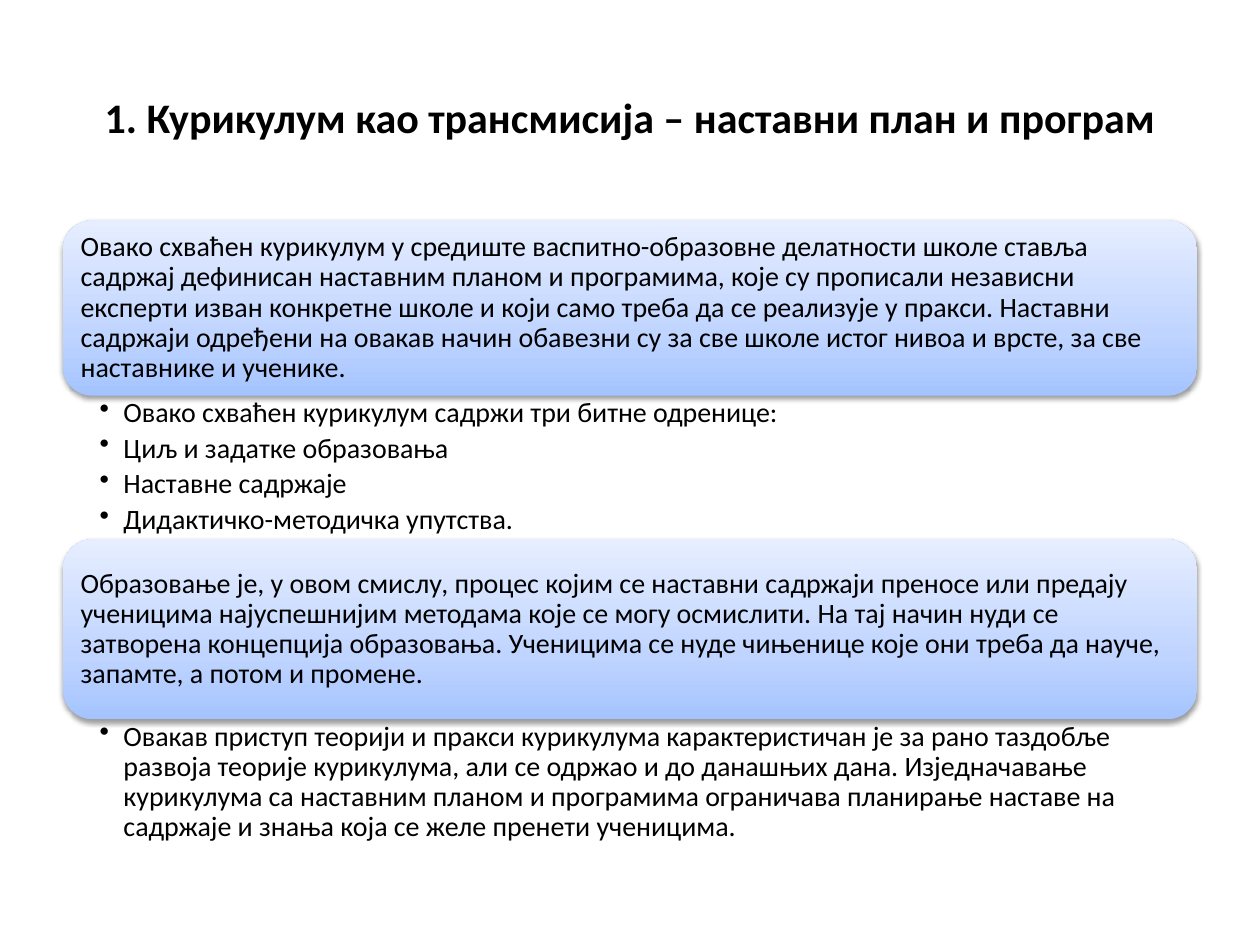
from dataclasses import dataclass

from lxml import etree
from pptx import Presentation
from pptx.dml.color import RGBColor
from pptx.enum.shapes import MSO_SHAPE
from pptx.enum.text import MSO_ANCHOR, PP_ALIGN
from pptx.oxml import parse_xml
from pptx.oxml.ns import qn
from pptx.shapes.autoshape import Shape
from pptx.slide import Slide
from pptx.util import Inches, Pt

ROUNDED = MSO_SHAPE.ROUNDED_RECTANGLE
TOP, MIDDLE = MSO_ANCHOR.TOP, MSO_ANCHOR.MIDDLE
LEFT, CENTER = PP_ALIGN.LEFT, PP_ALIGN.CENTER
DRAWING = 'xmlns:a="http://schemas.openxmlformats.org/drawingml/2006/main"'
GRADIENT = ((0, "A4C4FF"), (35, "BFD4FF"), (100, "E6EEFF"))
MARGIN, WIDTH, PADDING = 0.5, 9, 0.07
BULLET_INDENT = 0.19
BODY_SIZE = 16


@dataclass
class Section:
    """A highlighted statement with the bullets below it."""

    top: float
    card_height: float
    list_height: float
    statement: str
    bullets: list[str]


SECTIONS = [
    Section(
        1.75, 1.39, 1.14,
        "Овако схваћен курикулум у средиште васпитно-образовне делатности школе ставља "
        "садржај дефинисан наставним планом и програмима, које су прописали независни "
        "експерти изван конкретне школе и који само треба да се реализује у пракси. Наставни "
        "садржаји одређени на овакав начин обавезни су за све школе истог нивоа и врсте, за све "
        "наставнике и ученике.",
        [
            "Овако схваћен курикулум садржи три битне одренице:",
            "Циљ и задатке образовања",
            "Наставне садржаје",
            "Дидактичко-методичка упутства.",
        ],
    ),
    Section(
        4.28, 1.43, 0.99,
        "Образовање је, у овом смислу, процес којим се наставни садржаји преносе или предају "
        "ученицима најуспешнијим методама које се могу осмислити. На тај начин нуди се "
        "затворена концепција образовања. Ученицима се нуде чињенице које они треба да науче, "
        "запамте, а потом и промене.",
        [
            "Овакав приступ теорији и пракси курикулума карактеристичан је за рано таздобље "
            "развоја теорије курикулума, али се одржао и до данашњих дана. Изједначавање "
            "курикулума са наставним планом и програмима ограничава планирање наставе на "
            "садржаје и знања која се желе пренети ученицима."
        ],
    ),
]


def color(value: str) -> RGBColor:
    """Turn a hex string into a colour."""
    return RGBColor.from_string(value)


def add_text(slide: Slide, texts: list[str], left: float, top: float, width: float,
             height: float, *, insets: tuple[float, float, float, float],
             size: float = BODY_SIZE, bold: bool = False, anchor: MSO_ANCHOR = MIDDLE,
             align: PP_ALIGN = LEFT, line_spacing: float = 0.9,
             space_after: float = 0, bulleted: bool = False) -> Shape:
    """Add a text box with one paragraph for each text."""
    box = slide.shapes.add_textbox(Inches(left), Inches(top), Inches(width), Inches(height))
    frame = box.text_frame
    frame.word_wrap = True
    frame.vertical_anchor = anchor
    (frame.margin_left, frame.margin_top,
     frame.margin_right, frame.margin_bottom) = map(Inches, insets)
    for index, text in enumerate(texts):
        paragraph = frame.add_paragraph() if index else frame.paragraphs[0]
        paragraph.alignment = align
        paragraph.line_spacing = line_spacing
        paragraph.space_after = Pt(space_after)
        run = paragraph.add_run()
        run.text = text
        run.font.name = "Calibri"
        run.font.size = Pt(size)
        run.font.bold = bold
        run.font.color.rgb = color("000000")
        if bulleted:
            paragraph.level = 1
            properties = paragraph._p.get_or_add_pPr()
            properties.set("marL", str(Inches(BULLET_INDENT)))
            properties.set("indent", str(-Inches(BULLET_INDENT)))
            etree.SubElement(properties, qn("a:buChar")).set("char", "•")
    return box


def add_card(slide: Slide, top: float, height: float) -> Shape:
    """Add a rounded card with a vertical gradient and a soft shadow."""
    card = slide.shapes.add_shape(
        ROUNDED, Inches(MARGIN), Inches(top), Inches(WIDTH), Inches(height))
    card.line.fill.background()
    stops = "".join(
        f'<a:gs pos="{position * 1000}"><a:srgbClr val="{value}"/></a:gs>'
        for position, value in GRADIENT)
    properties = card._element.spPr
    properties.find(qn("a:prstGeom")).addnext(parse_xml(
        f'<a:gradFill {DRAWING} rotWithShape="1"><a:gsLst>{stops}</a:gsLst>'
        '<a:lin ang="16200000" scaled="0"/></a:gradFill>'))
    properties.append(parse_xml(
        f'<a:effectLst {DRAWING}><a:outerShdw blurRad="{Pt(3.1)}" dist="{Pt(1.6)}" '
        'dir="5400000" rotWithShape="0"><a:srgbClr val="000000"><a:alpha val="38000"/>'
        '</a:srgbClr></a:outerShdw></a:effectLst>'))
    return card


def add_section(slide: Slide, section: Section) -> None:
    """Draw the card, its statement and the bullets under it."""
    add_card(slide, section.top, section.card_height)
    add_text(slide, [section.statement], MARGIN + PADDING, section.top + PADDING,
             WIDTH - 2 * PADDING, section.card_height - 2 * PADDING,
             insets=(PADDING,) * 4, space_after=0.35 * BODY_SIZE)
    add_text(slide, section.bullets, MARGIN, section.top + section.card_height,
             WIDTH, section.list_height, insets=(0.29, 0.02, 0.12, 0.02),
             anchor=TOP, space_after=0.2 * BODY_SIZE, bulleted=True)


def main() -> None:
    """Build the slide and save it."""
    presentation = Presentation()
    presentation.slide_width = Inches(10)
    presentation.slide_height = Inches(7.5)
    slide = presentation.slides.add_slide(presentation.slide_layouts[6])
    add_text(slide, ["1. Курикулум као трансмисија – наставни план и програм"],
             MARGIN, 0.3, WIDTH, 1.25, insets=(0.1, 0.05, 0.1, 0.05),
             size=24, bold=True, align=CENTER, line_spacing=1)
    for section in SECTIONS:
        add_section(slide, section)
    presentation.save("out.pptx")


if __name__ == "__main__":
    main()
